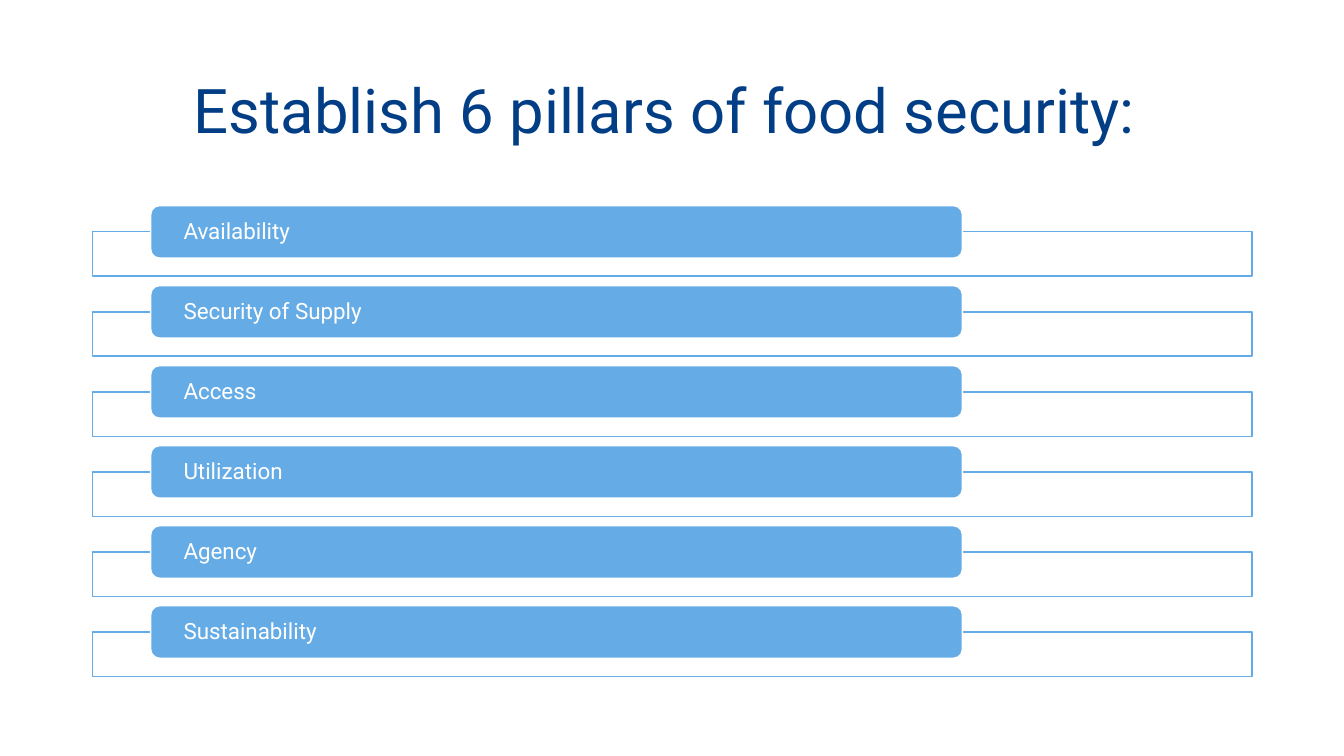
from lxml import etree
from pptx import Presentation
from pptx.dml.color import RGBColor
from pptx.enum.shapes import MSO_SHAPE
from pptx.enum.text import MSO_ANCHOR, MSO_AUTO_SIZE, PP_ALIGN
from pptx.oxml.ns import qn
from pptx.util import Inches, Pt

TITLE = "Establish 6 pillars of food security: "
PILLARS = ["Availability", "Security of Supply", "Access",
           "Utilization", "Agency", "Sustainability"]

COLORS = {"title": "023E85", "pillar": "65ABE5", "white": "FFFFFF"}
FONT = "Roboto"
RECTANGLE = MSO_SHAPE.RECTANGLE
ROUNDED = MSO_SHAPE.ROUNDED_RECTANGLE
LEFT, CENTER = PP_ALIGN.LEFT, PP_ALIGN.CENTER
MIDDLE = MSO_ANCHOR.MIDDLE

SLIDE_WIDTH, SLIDE_HEIGHT = 13.33, 7.5
MARGIN, CONTENT_WIDTH = 0.92, 11.5
TITLE_TOP, TITLE_HEIGHT = 0.4, 1.45
FIRST_FRAME_TOP, LAST_FRAME_TOP, FRAME_HEIGHT = 2.3, 6.27, 0.44
ROW_PITCH = (LAST_FRAME_TOP - FIRST_FRAME_TOP) / (len(PILLARS) - 1)
PILL_LEFT = MARGIN + 0.05 * CONTENT_WIDTH
PILL_WIDTH, PILL_HEIGHT = 0.7 * CONTENT_WIDTH, 0.52
PILL_RISE = 0.26


def color(name):
    return RGBColor.from_string(COLORS[name])


def write_text(shape, text, size, color_name, align, inset_x, inset_y):
    frame = shape.text_frame
    frame.word_wrap = True
    frame.auto_size = MSO_AUTO_SIZE.NONE
    frame.vertical_anchor = MIDDLE
    frame.margin_left = frame.margin_right = Inches(inset_x)
    frame.margin_top = frame.margin_bottom = Inches(inset_y)
    paragraph = frame.paragraphs[0]
    paragraph.alignment = align
    paragraph.line_spacing = 0.9
    run = paragraph.add_run()
    run.text = text
    run.font.name = FONT
    run.font.size = Pt(size)
    run.font.color.rgb = color(color_name)


def add_box(slide, kind, left, top, width, height, fill, line):
    shape = slide.shapes.add_shape(
        kind, Inches(left), Inches(top), Inches(width), Inches(height))
    shape.shadow.inherit = False
    shape.fill.solid()
    shape.fill.fore_color.rgb = color(fill)
    shape.line.color.rgb = color(line)
    shape.line.width = Pt(1)
    return shape


def set_opacity(shape, percent):
    fill_color = shape.fill._xPr.find(qn("a:solidFill"))[0]
    etree.SubElement(fill_color, qn("a:alpha"), val=str(percent * 1000))


def add_pillar(slide, row, name):
    top = FIRST_FRAME_TOP + row * ROW_PITCH
    frame = add_box(slide, RECTANGLE, MARGIN, top, CONTENT_WIDTH,
                    FRAME_HEIGHT, "white", "pillar")
    set_opacity(frame, 90)
    pill = add_box(slide, ROUNDED, PILL_LEFT, top - PILL_RISE, PILL_WIDTH,
                   PILL_HEIGHT, "pillar", "white")
    pill.adjustments[0] = 0.167
    write_text(pill, name, size=16, color_name="white", align=LEFT,
               inset_x=0.3, inset_y=0)


def main():
    presentation = Presentation()
    presentation.slide_width = Inches(SLIDE_WIDTH)
    presentation.slide_height = Inches(SLIDE_HEIGHT)
    slide = presentation.slides.add_slide(
        presentation.slide_layouts.get_by_name("Title Only"))

    title = slide.shapes.title
    title.left, title.top = Inches(MARGIN), Inches(TITLE_TOP)
    title.width, title.height = Inches(CONTENT_WIDTH), Inches(TITLE_HEIGHT)
    write_text(title, TITLE, size=44, color_name="title", align=CENTER,
               inset_x=0.1, inset_y=0.05)

    for row, name in enumerate(PILLARS):
        add_pillar(slide, row, name)

    presentation.save("out.pptx")


if __name__ == "__main__":
    main()
